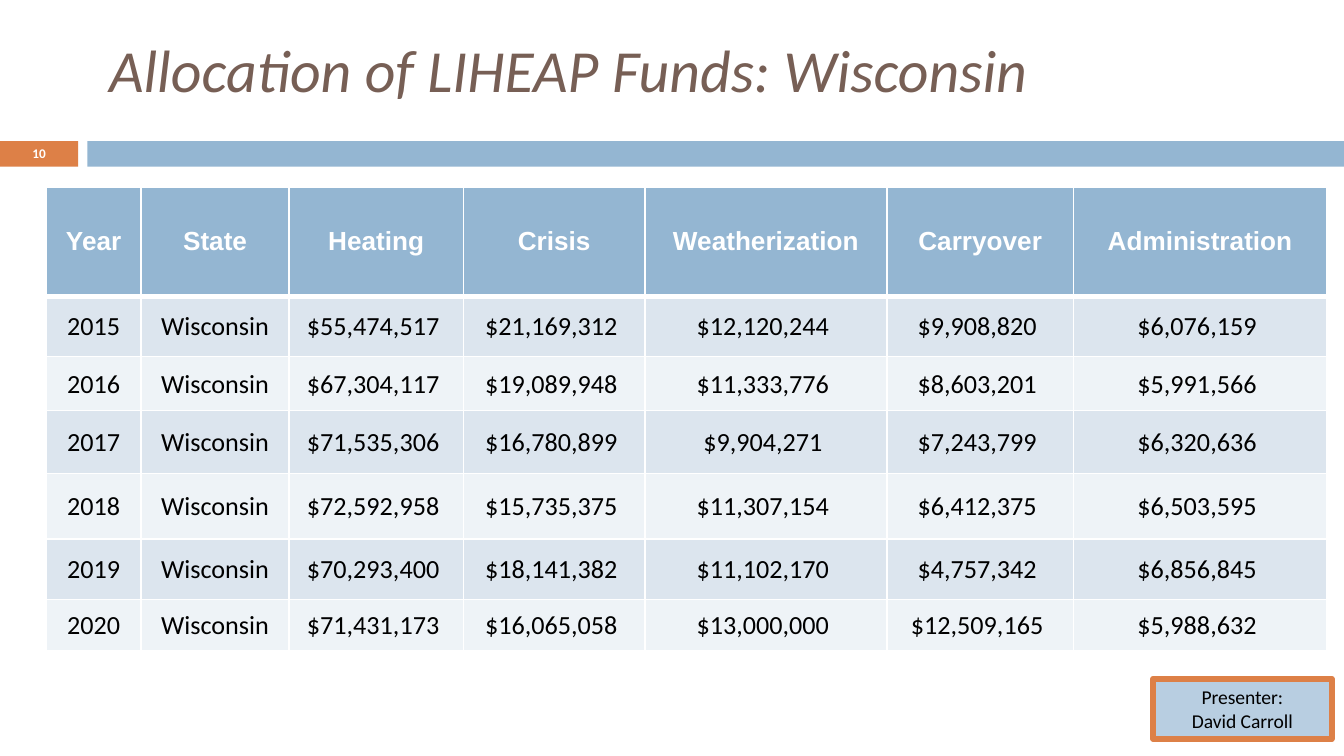
from dataclasses import dataclass

from lxml.etree import SubElement
from pptx import Presentation
from pptx.dml.color import RGBColor
from pptx.enum.shapes import MSO_SHAPE
from pptx.enum.text import MSO_ANCHOR, MSO_AUTO_SIZE, PP_ALIGN
from pptx.oxml.ns import qn
from pptx.util import Cm, Pt


@dataclass(frozen=True)
class Theme:
    blue: str = "94B6D2"
    orange: str = "DD8047"
    brown: str = "775F55"
    white: str = "FFFFFF"
    black: str = "000000"
    bands: tuple = ("DCE5EE", "EEF3F7")
    body_font: str = "Calibri"
    header_font: str = "Arial"
    title_size: float = 32
    table_size: float = 14
    presenter_size: float = 10.5
    number_size: float = 7.1


HEADERS = ["Year", "State", "Heating", "Crisis", "Weatherization", "Carryover", "Administration"]
STATE = "Wisconsin"
ALLOCATIONS = {
    2015: (55474517, 21169312, 12120244, 9908820, 6076159),
    2016: (67304117, 19089948, 11333776, 8603201, 5991566),
    2017: (71535306, 16780899, 9904271, 7243799, 6320636),
    2018: (72592958, 15735375, 11307154, 6412375, 6503595),
    2019: (70293400, 18141382, 11102170, 4757342, 6856845),
    2020: (71431173, 16065058, 13000000, 12509165, 5988632),
}
COLUMN_WIDTHS = [1.8, 2.79, 3.3, 3.43, 4.57, 3.53, 4.78]
ROW_HEIGHTS = [2.06, 1.14, 1.02, 1.19, 1.24, 1.14, 0.97]


def write_text(frame, text, *, font, size, color, bold=False, italic=False,
               align=PP_ALIGN.CENTER, line_spacing=None):
    """Fill a text frame, one paragraph for each line of text."""
    for index, line in enumerate(text.split("\n")):
        para = frame.paragraphs[0] if index == 0 else frame.add_paragraph()
        para.alignment = align
        if line_spacing:
            para.line_spacing = line_spacing
        span = para.add_run()
        span.text = line
        span.font.name = font
        span.font.size = Pt(size)
        span.font.bold = bold
        span.font.italic = italic
        span.font.color.rgb = RGBColor.from_string(color)


def set_margins(target, left, top, right, bottom):
    target.margin_left, target.margin_top = Cm(left), Cm(top)
    target.margin_right, target.margin_bottom = Cm(right), Cm(bottom)


def set_borders(cell, color, **widths):
    """Draw cell borders; widths in points are keyed L, R, T and B."""
    properties = cell._tc.get_or_add_tcPr()
    for side, width in widths.items():
        line = SubElement(properties, qn(f"a:ln{side}"), w=str(Pt(width)))
        SubElement(SubElement(line, qn("a:solidFill")), qn("a:srgbClr"), val=color)


class SlideBuilder:
    def __init__(self, page, theme):
        self.page = page
        self.theme = theme

    def title(self, text, left, top, width, height):
        box = self.page.shapes.title
        box.left, box.top, box.width, box.height = map(Cm, (left, top, width, height))
        frame = box.text_frame
        frame.auto_size = MSO_AUTO_SIZE.NONE
        frame.word_wrap = True
        frame.vertical_anchor = MSO_ANCHOR.TOP
        set_margins(frame, 0.74, 0, 0.25, 0)
        write_text(frame, text, font=self.theme.body_font, size=self.theme.title_size,
                   color=self.theme.brown, italic=True, align=PP_ALIGN.LEFT, line_spacing=0.8)

    def rectangle(self, left, top, width, height, fill, opacity=None, border=None):
        box = self.page.shapes.add_shape(
            MSO_SHAPE.RECTANGLE, *map(Cm, (left, top, width, height)))
        box.shadow.inherit = False
        box.fill.solid()
        box.fill.fore_color.rgb = RGBColor.from_string(fill)
        if opacity:
            color = box._element.spPr.find(qn("a:solidFill")).find(qn("a:srgbClr"))
            SubElement(color, qn("a:alpha"), val=str(opacity * 1000))
        if border:
            box.line.color.rgb = RGBColor.from_string(border)
            box.line.width = Pt(3)
        else:
            box.line.fill.background()
        return box

    def page_number(self, text, left, top, width, height):
        box = self.page.shapes.add_textbox(*map(Cm, (left, top, width, height)))
        frame = box.text_frame
        frame.word_wrap = True
        frame.vertical_anchor = MSO_ANCHOR.MIDDLE
        set_margins(frame, 0, 0, 0, 0)
        write_text(frame, text, font=self.theme.body_font, size=self.theme.number_size,
                   color=self.theme.white, bold=True)

    def presenter(self, text, left, top, width, height):
        box = self.rectangle(left, top, width, height, self.theme.blue,
                             opacity=66, border=self.theme.orange)
        frame = box.text_frame
        frame.word_wrap = True
        frame.auto_size = MSO_AUTO_SIZE.SHAPE_TO_FIT_TEXT
        frame.vertical_anchor = MSO_ANCHOR.TOP
        write_text(frame, text, font=self.theme.body_font,
                   size=self.theme.presenter_size, color=self.theme.black)

    def table(self, rows, left, top):
        theme = self.theme
        grid = self.page.shapes.add_table(
            len(rows), len(rows[0]), Cm(left), Cm(top),
            Cm(sum(COLUMN_WIDTHS)), Cm(sum(ROW_HEIGHTS))).table
        for column, width in zip(grid.columns, COLUMN_WIDTHS):
            column.width = Cm(width)
        for index, (height, values) in enumerate(zip(ROW_HEIGHTS, rows)):
            grid.rows[index].height = Cm(height)
            is_header = index == 0
            for cell, value in zip(grid.rows[index].cells, values):
                cell.vertical_anchor = MSO_ANCHOR.MIDDLE
                if not is_header:
                    set_margins(cell, 0.02, 0.02, 0.02, 0)
                set_borders(cell, theme.white, L=1, R=1,
                            T=3 if index == 1 else 1, B=3 if is_header else 1)
                cell.fill.solid()
                cell.fill.fore_color.rgb = RGBColor.from_string(
                    theme.blue if is_header else theme.bands[(index - 1) % 2])
                write_text(cell.text_frame, value, size=theme.table_size, bold=is_header,
                           font=theme.header_font if is_header else theme.body_font,
                           color=theme.white if is_header else theme.black)


def main():
    deck = Presentation()
    deck.slide_width, deck.slide_height = Cm(25.4), Cm(14.29)
    theme = Theme()
    builder = SlideBuilder(deck.slides.add_slide(deck.slide_layouts[5]), theme)

    builder.rectangle(0, 2.67, 1.48, 0.48, theme.orange)
    builder.rectangle(1.65, 2.67, 23.75, 0.48, theme.blue)
    builder.page_number("10", 0, 2.65, 1.48, 0.5)
    builder.title("Allocation of LIHEAP Funds: Wisconsin", 1.32, 0.89, 25.93, 2.06)
    builder.presenter("Presenter:\nDavid Carroll", 21.79, 12.83, 3.38, 1.14)
    rows = [HEADERS] + [
        [str(year), STATE] + [f"${amount:,} " for amount in amounts]
        for year, amounts in ALLOCATIONS.items()
    ]
    builder.table(rows, 0.87, 3.54)
    deck.save("out.pptx")


if __name__ == "__main__":
    main()
